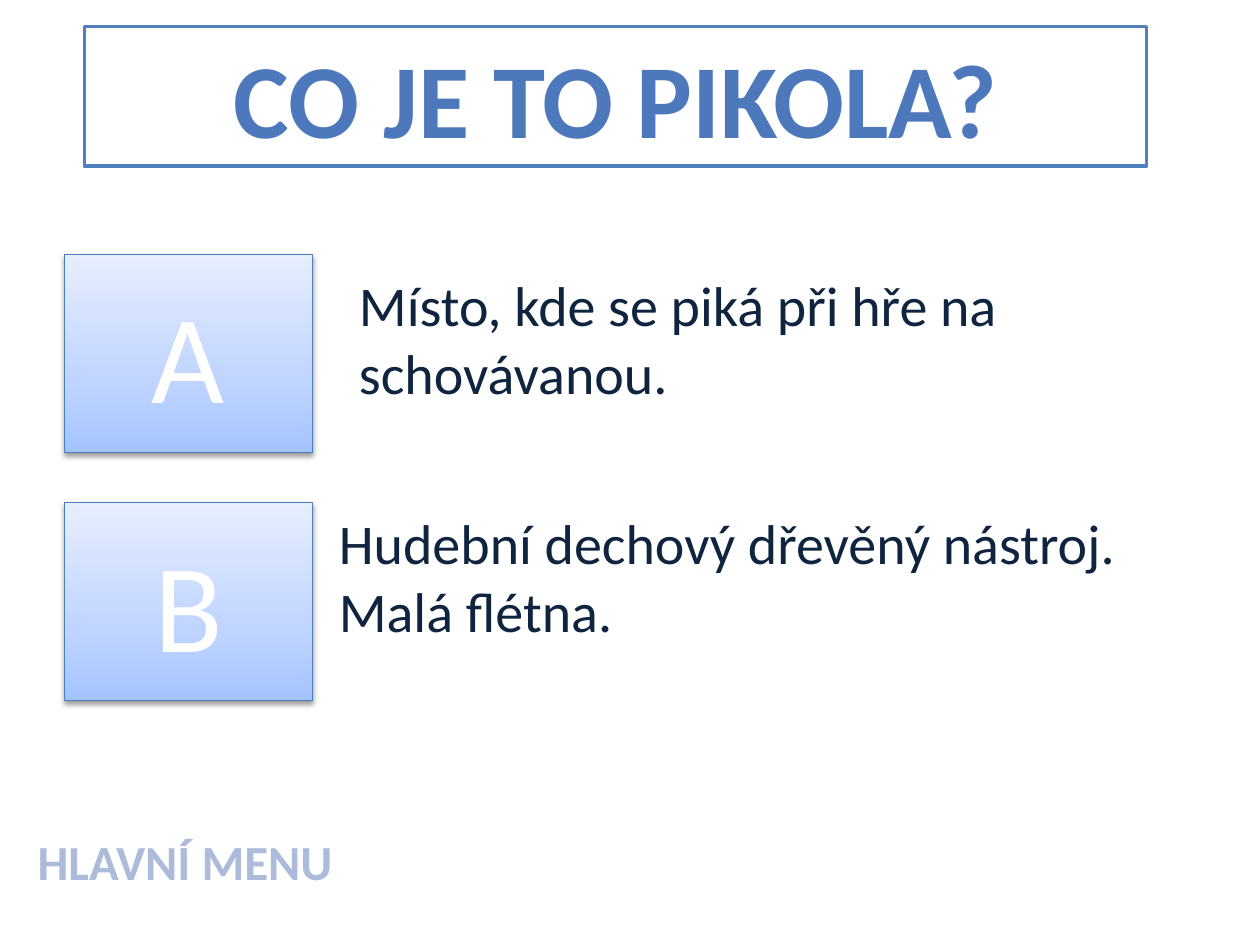
from pptx import Presentation, util as u
from pptx.dml.color import RGBColor
from pptx.enum import shapes, text
from pptx.oxml import parse_xml
from pptx.oxml.ns import nsdecls

theme = {
    "font": "Calibri",
    "title": "4D79BC", "frame": "4F81BD", "paper": "FFFFFF",
    "edge": "4B7EBC", "ink": "0F243E", "menu": "ADBBDA",
    "fade": [(0, "A4C4FF"), (35, "BFD4FF"), (100, "E6EEFF")],
    "big": 72, "head": 60, "body": 32, "small": 28,
}

deck = Presentation()
deck.slide_width, deck.slide_height = u.Inches(10), u.Inches(7.5)
slide = deck.slides.add_slide(deck.slide_layouts[6])
# The grid has 100 columns and 75 rows
col, row = deck.slide_width / 100, deck.slide_height / 75


def place(left, top, wide, high, line=None, width=1):
    """Add a text box, or a rectangle when a line colour is given."""
    box = [int(n) for n in (left * col, top * row, wide * col, high * row)]
    if line is None:
        return slide.shapes.add_textbox(*box)
    rect = slide.shapes.add_shape(shapes.MSO_SHAPE.RECTANGLE, *box)
    rect.shadow.inherit = False
    rect.line.color.rgb = RGBColor.from_string(line)
    rect.line.width = u.Pt(width)
    return rect


def write(shape, words, size, color, bold=False, center=False):
    """Set one paragraph of text in a shape."""
    frame = shape.text_frame
    frame.word_wrap = True
    mid = text.MSO_ANCHOR.MIDDLE
    frame.vertical_anchor = mid if center else text.MSO_ANCHOR.TOP
    para = frame.paragraphs[0]
    para.text = words
    para.alignment = text.PP_ALIGN.CENTER if center else text.PP_ALIGN.LEFT
    font = para.font
    font.name, font.size, font.bold = theme["font"], u.Pt(size), bold
    font.color.rgb = RGBColor.from_string(color)


# Link to the main menu
write(place(2, 65.5, 28.7, 5.7), "HLAVNÍ MENU", theme["small"],
      theme["menu"], bold=True)

# Answers: lettered tile with its text
answers = [
    ("A", 20.2, 27.5, 21, "Místo, kde se piká při hře na schovávanou."),
    ("B", 39.9, 25.9, 39.9, "Hudební dechový dřevěný nástroj. Malá flétna."),
]
stops = "".join(f'<a:gs pos="{pos * 1000}"><a:srgbClr val="{tone}"/></a:gs>'
                for pos, tone in theme["fade"])
for mark, top, left, start, words in answers:
    tile = place(5.1, top, 19.7, 15.7, theme["edge"], 0.75)
    props = tile.element.spPr
    # Three-stop gradient, rising from the bottom edge
    props.insert(2, parse_xml(
        f'<a:gradFill {nsdecls("a")} rotWithShape="1"><a:gsLst>{stops}</a:gsLst>'
        '<a:lin ang="16200000" scaled="0"/></a:gradFill>'))
    # Soft shadow below the tile
    props[-1].append(parse_xml(
        f'<a:outerShdw {nsdecls("a")} blurRad="{u.Pt(3.1)}" dist="{u.Pt(1.6)}" '
        'dir="5400000" rotWithShape="0"><a:srgbClr val="000000">'
        '<a:alpha val="38000"/></a:srgbClr></a:outerShdw>'))
    write(tile, mark, theme["big"], theme["paper"], center=True)
    write(place(left, start, 70.1, 11.8), words, theme["body"], theme["ink"])

# Framed question
title = place(6.7, 2.1, 84.3, 11.1, theme["frame"], 2)
title.fill.solid()
title.fill.fore_color.rgb = RGBColor.from_string(theme["paper"])
write(title, "CO JE TO PIKOLA?", theme["head"], theme["title"],
      bold=True, center=True)

deck.save("out.pptx")
